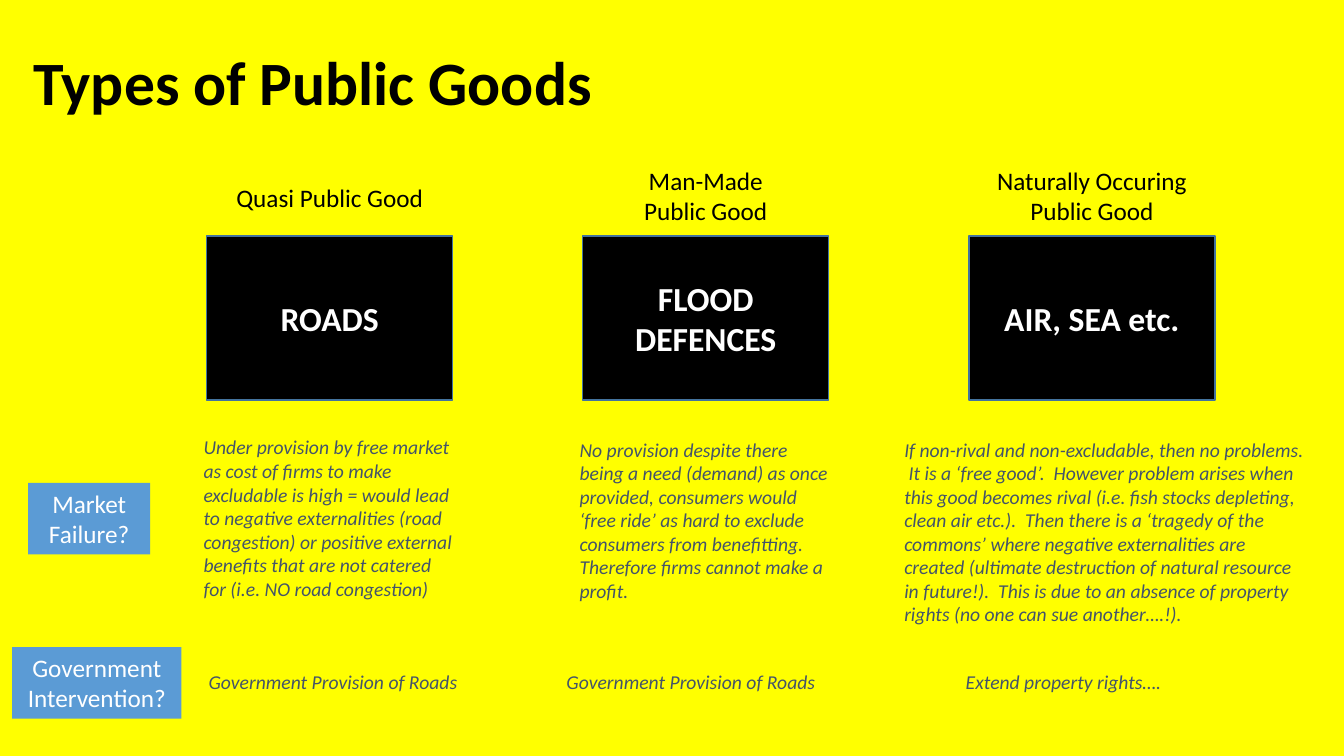
from pptx import Presentation
from pptx.dml.color import RGBColor
from pptx.enum.shapes import MSO_SHAPE
from pptx.enum.text import MSO_ANCHOR, PP_ALIGN
from pptx.util import Inches, Pt

COLORS = {
    "background": "FFFF00",
    "black": "000000",
    "white": "FFFFFF",
    "border": "43739E",
    "label": "5B9BD5",
    "note": "44546A",
}


def write(shape, lines, size, color, align=PP_ALIGN.LEFT, anchor=MSO_ANCHOR.TOP,
          bold=False, italic=False, wrap=True):
    """Fill the shape's text frame with one formatted paragraph per line."""
    tf = shape.text_frame
    tf.word_wrap = wrap
    tf.vertical_anchor = anchor
    for i, line in enumerate(lines):
        p = tf.add_paragraph() if i else tf.paragraphs[0]
        p.alignment = align
        r = p.add_run()
        r.text = line
        r.font.name = "Calibri"
        r.font.size = Pt(size)
        r.font.bold = bold
        r.font.italic = italic
        r.font.color.rgb = RGBColor.from_string(COLORS[color])


def add_box(s, left, top, width, height, fill):
    """Add a plain filled rectangle without outline or shadow."""
    box = s.shapes.add_shape(MSO_SHAPE.RECTANGLE, Inches(left), Inches(top),
                             Inches(width), Inches(height))
    box.shadow.inherit = False
    box.fill.solid()
    box.fill.fore_color.rgb = RGBColor.from_string(COLORS[fill])
    box.line.fill.background()
    return box


prs = Presentation()
prs.slide_width = Inches(13.33)
prs.slide_height = Inches(7.5)
s = prs.slides.add_slide(prs.slide_layouts[5])
s.background.fill.solid()
s.background.fill.fore_color.rgb = RGBColor.from_string(COLORS["background"])

title = s.shapes.title
title.left, title.top = Inches(0.23), Inches(0.12)
title.width, title.height = Inches(12.89), Inches(1.45)
write(title, ["Types of Public Goods"], 44, "black", anchor=MSO_ANCHOR.MIDDLE, bold=True)
title.text_frame.paragraphs[0].line_spacing = 0.9

# Each column: example box left, example, heading, market failure, intervention.
# Texts come with their own left, top, width and height.
columns = [
    (2.05, "ROADS",
     ["Quasi Public Good"], (2.23, 1.76, 2.08, 0.4),
     "Under provision by free market as cost of firms to make excludable is high = "
     "would lead to negative externalities (road congestion) or positive external "
     "benefits that are not catered for (i.e. NO road congestion)",
     (1.92, 4.27, 2.69, 1.75),
     "Government Provision of Roads", 1.97),
    (5.78, "FLOOD DEFENCES",
     ["Man-Made", "Public Good"], (6.28, 1.59, 1.44, 0.71),
     "No provision despite there being a need (demand) as once provided, consumers "
     "would ‘free ride’ as hard to exclude consumers from benefitting.  Therefore "
     "firms cannot make a profit.",
     (5.65, 4.29, 2.69, 1.75),
     "Government Provision of Roads", 5.52),
    (9.61, "AIR, SEA etc.",
     ["Naturally Occuring", "Public Good"], (9.78, 1.59, 2.1, 0.71),
     "If non-rival and non-excludable, then no problems.  It is a ‘free good’.  "
     "However problem arises when this good becomes rival (i.e. fish stocks "
     "depleting, clean air etc.).  Then there is a ‘tragedy of the commons’ where "
     "negative externalities are created (ultimate destruction of natural resource "
     "in future!).  This is due to an absence of property rights (no one can sue "
     "another….!).",
     (8.87, 4.29, 4.19, 1.99),
     "Extend property rights….", 9.48),
]
for left, example, heading, heading_at, failure, failure_at, action, action_left in columns:
    box = add_box(s, left, 2.34, 2.44, 1.63, "black")
    box.line.color.rgb = RGBColor.from_string(COLORS["border"])
    box.line.width = Pt(1)
    write(box, [example], 24, "white", PP_ALIGN.CENTER, MSO_ANCHOR.MIDDLE, bold=True)

    tb = s.shapes.add_textbox(*map(Inches, heading_at))
    write(tb, heading, 18, "black", PP_ALIGN.CENTER, wrap=False)

    for note, at in ((failure, failure_at), (action, (action_left, 6.6, 2.69, 0.34))):
        tb = s.shapes.add_textbox(*map(Inches, at))
        write(tb, [note], 14, "note", italic=True)

for label, left, top, width in (("Market Failure?", 0.28, 4.79, 1.21),
                                ("Government Intervention?", 0.12, 6.42, 1.68)):
    box = add_box(s, left, top, width, 0.71, "label")
    write(box, [label], 18, "white", PP_ALIGN.CENTER)

prs.save("out.pptx")
